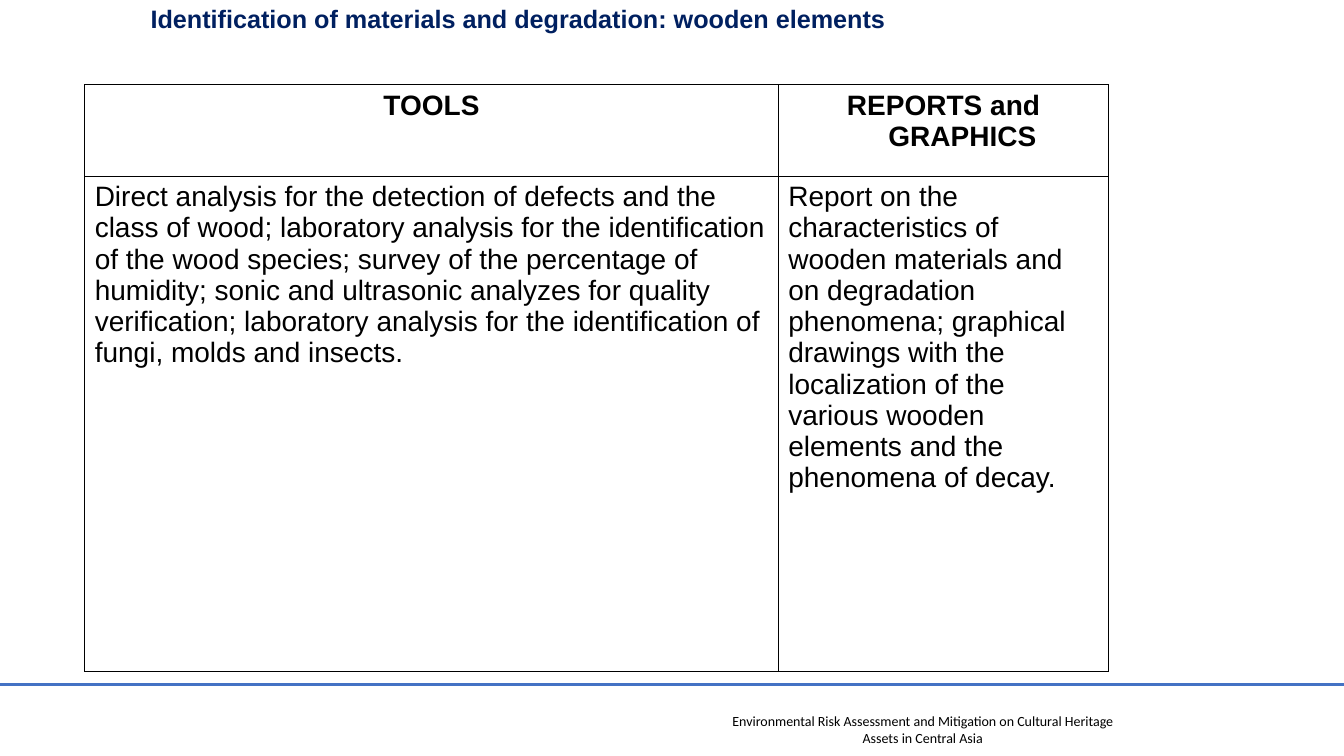
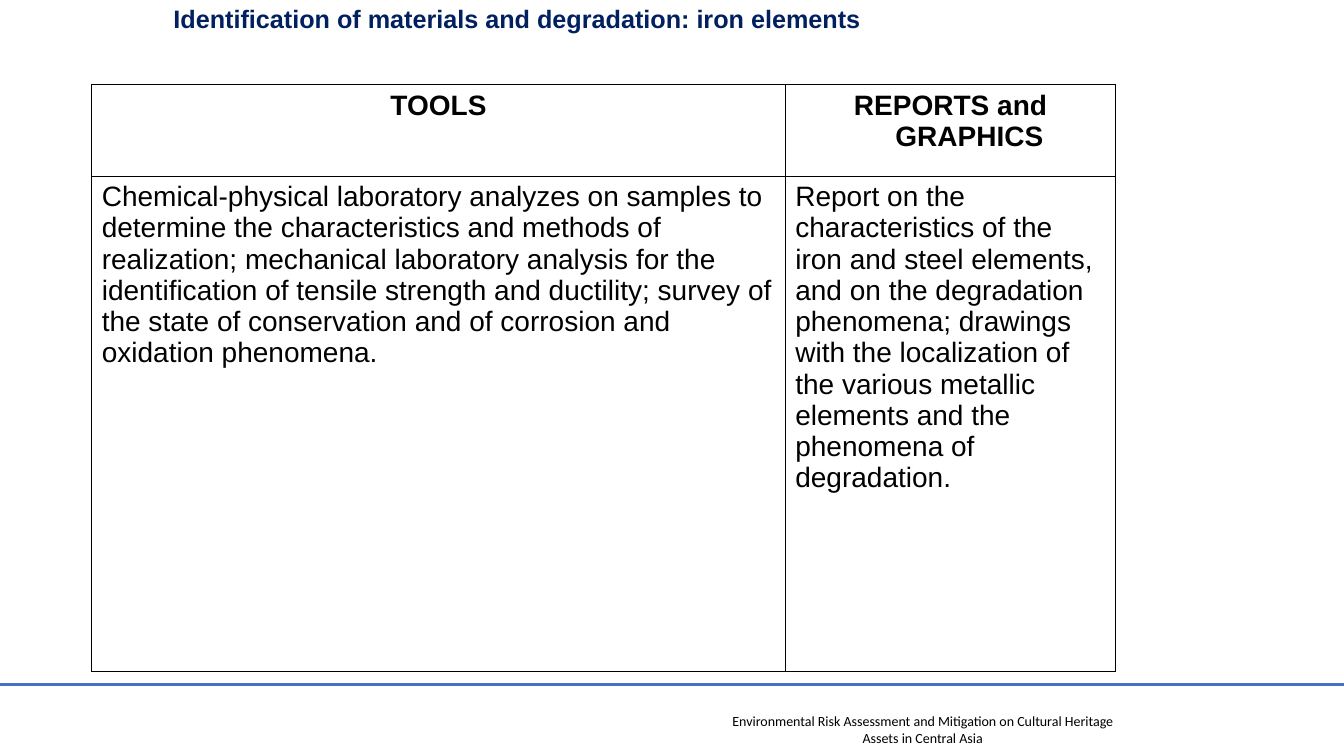
import pptx
import pptx.util
import pptx.dml.color
import pptx.enum.shapes
import pptx.enum.text
import pptx.oxml
import pptx.oxml.ns
from lxml import etree

Pt = pptx.util.Pt
ALIGN = pptx.enum.text.PP_ALIGN


class Deck:
    """Shared style and the slide being built."""
    colors = {"title": "002060", "text": "000000", "rule": "4472C4",
              "paper": "FFFFFF", "border": "000000"}
    width, height = 960, 540
    footer_text = ("Environmental Risk Assessment and Mitigation on Cultural "
                   "Heritage Assets in Central Asia")
    headers = ("TOOLS", "REPORTS and GRAPHICS")
    col_widths = (495.4, 236.2)
    row_heights = (65.5, 353.5)

    def __init__(self):
        self.prs = pptx.Presentation()
        self.prs.slide_width = Pt(self.width)
        self.prs.slide_height = Pt(self.height)
        self.s = None

    def rgb(self, name):
        return pptx.dml.color.RGBColor.from_string(self.colors[name])

    def fill(self, obj, name):
        obj.fill.solid()
        obj.fill.fore_color.rgb = self.rgb(name)

    def add_text(self, tf, text, size, font="Arial", color="text", bold=False,
                 align=ALIGN.CENTER):
        tf.word_wrap = True
        p = tf.paragraphs[0]
        p.alignment = align
        r = p.add_run()
        r.text = text
        r.font.size = Pt(size)
        r.font.name = font
        r.font.bold = bold
        r.font.color.rgb = self.rgb(color)
        return p

    # Slide with its footer band
    def new_slide(self):
        self.s = self.prs.slides.add_slide(self.prs.slide_layouts[6])
        sp = self.s.shapes.add_textbox(Pt(505.4), Pt(505.4), Pt(307.4), Pt(31.7))
        self.add_text(sp.text_frame, self.footer_text, 10, font="Calibri")
        y = Pt(488.9)
        line = self.s.shapes.add_connector(
            pptx.enum.shapes.MSO_CONNECTOR.STRAIGHT, 0, y, Pt(self.width), y)
        line.line.color.rgb = self.rgb("rule")
        line.line.width = Pt(2.25)
        etree.SubElement(line._element.spPr, pptx.oxml.ns.qn("a:effectLst"))

    def title(self, text, left):
        sp = self.s.shapes.add_shape(pptx.enum.shapes.MSO_SHAPE.RECTANGLE,
                                     Pt(left), 0, Pt(560.2), Pt(46.8))
        sp.shadow.inherit = False
        self.fill(sp, "paper")
        sp.line.color.rgb = self.rgb("paper")
        sp.line.width = Pt(1)
        tf = sp.text_frame
        tf.vertical_anchor = pptx.enum.text.MSO_ANCHOR.TOP
        tf.margin_top = Pt(2.7)
        self.add_text(tf, text, 18, color="title", bold=True)

    def borders(self, cell):
        tcPr = cell._tc.get_or_add_tcPr()
        for side in ("lnL", "lnR", "lnT", "lnB"):
            tcPr.append(pptx.oxml.parse_xml(
                f'<a:{side} {pptx.oxml.ns.nsdecls("a")} w="{Pt(1)}"><a:solidFill>'
                f'<a:srgbClr val="{self.colors["border"]}"/></a:solidFill></a:{side}>'))

    # Header row over one row of body text
    def table(self, left, body):
        tbl = self.s.shapes.add_table(
            2, 2, Pt(left), Pt(60.5), Pt(sum(self.col_widths)),
            Pt(sum(self.row_heights))).table
        tbl.first_row = tbl.horz_banding = False
        for col, w in zip(tbl.columns, self.col_widths):
            col.width = Pt(w)
        for row, h in zip(tbl.rows, self.row_heights):
            row.height = Pt(h)
        for i, texts in enumerate((self.headers, body)):
            head = i == 0
            for j, text in enumerate(texts):
                cell = tbl.cell(i, j)
                self.borders(cell)
                self.fill(cell, "paper")
                p = self.add_text(cell.text_frame, text, 20, bold=head,
                                  align=ALIGN.CENTER if head else ALIGN.LEFT)
                if head:  # hanging indent
                    pPr = p._p.get_or_add_pPr()
                    pPr.set("marL", str(Pt(27)))
                    pPr.set("indent", str(-Pt(27)))


# Subject, title left, table left, body texts
SLIDES = [
    ("wooden", 90, 60.5, (
        "Direct analysis for the detection of defects and the class of wood; "
        "laboratory analysis for the identification of the wood species; survey "
        "of the percentage of humidity; sonic and ultrasonic analyzes for quality "
        "verification; laboratory analysis for the identification of fungi, molds "
        "and insects.",
        "Report on the characteristics of wooden materials and on degradation "
        "phenomena; graphical drawings with the localization of the various "
        "wooden elements and the phenomena of decay.")),
    ("iron", 89.3, 65.5, (
        "Chemical-physical laboratory analyzes on samples to determine the "
        "characteristics and methods of realization; mechanical laboratory "
        "analysis for the identification of tensile strength and ductility; "
        "survey of the state of conservation and of corrosion and oxidation "
        "phenomena.",
        "Report on the characteristics of the iron and steel elements, and on the "
        "degradation phenomena; drawings with the localization of the various "
        "metallic elements and the phenomena of degradation.")),
]


def main():
    deck = Deck()
    for subject, title_left, table_left, body in SLIDES:
        deck.new_slide()
        deck.table(table_left, body)
        deck.title(f"Identification of materials and degradation: {subject} elements",
                   title_left)
    deck.prs.save("out.pptx")


if __name__ == "__main__":
    main()
